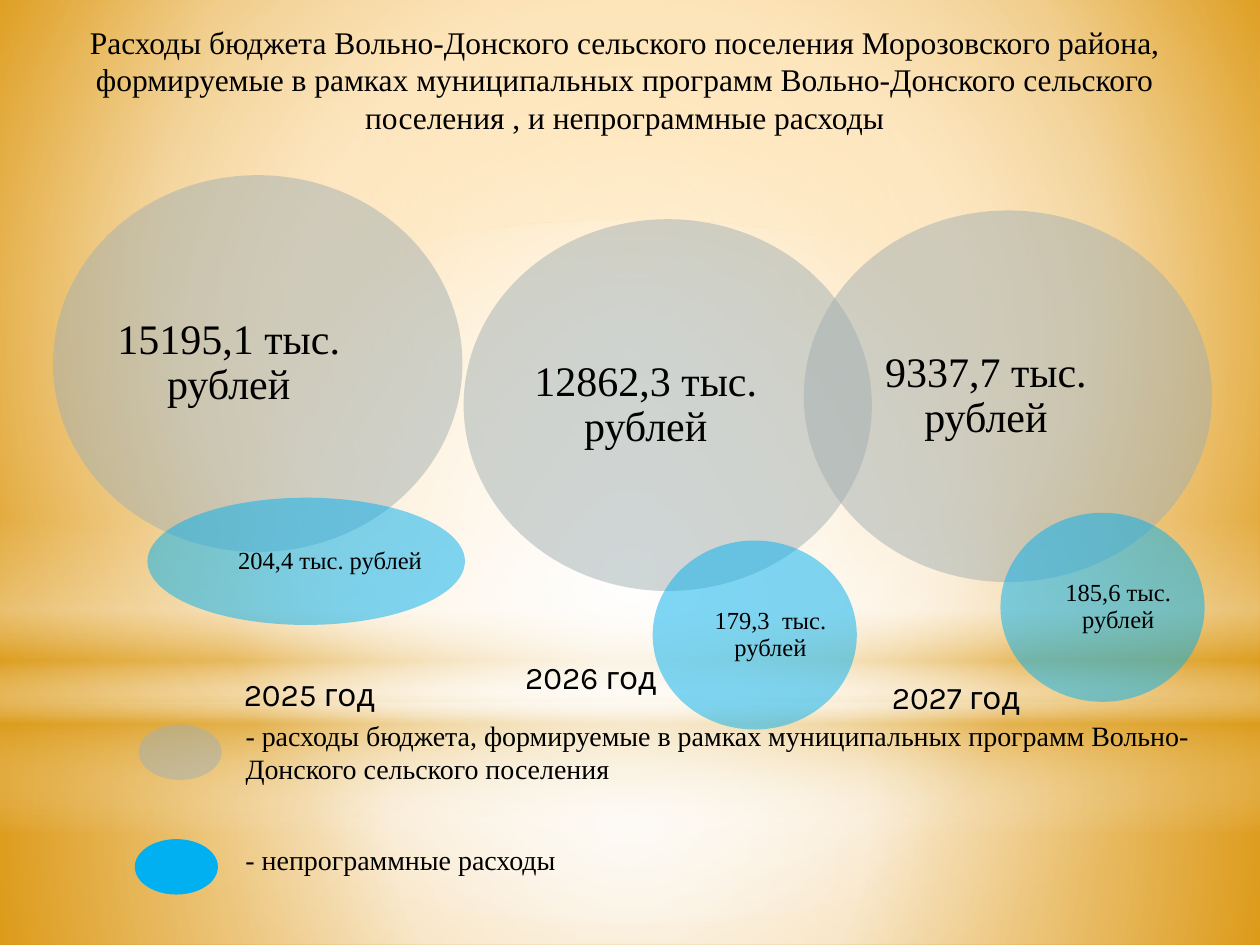
from dataclasses import dataclass

from pptx import Presentation
from pptx.dml.color import RGBColor
from pptx.enum.shapes import MSO_SHAPE as Shape
from pptx.enum.text import MSO_ANCHOR as Anchor, MSO_AUTO_SIZE as AutoSize, PP_ALIGN as Align
from pptx.oxml import parse_xml
from pptx.oxml.ns import nsdecls, qn
from pptx.util import Inches, Pt


@dataclass(frozen=True)
class Theme:
    serif: str = "Times New Roman"
    sans: str = "Karla"
    ink: str = "000000"
    program: str = "A2AFB1"
    other: str = "00B0F0"
    white: str = "FFFFFF"
    gold: str = "DC9E1F"
    backdrop: tuple = ("FFA607", "F9CD88", "E08E02")
    heading: int = 18
    legend: int = 16
    large: int = 24
    small: int = 14


def set_gradient(fill, holder, stops, focus=None):
    """Stops are (position %, colour, opacity %); without a focus it runs downwards."""
    fill.gradient()
    gradient = holder.find(qn("a:gradFill"))
    for child in list(gradient):
        gradient.remove(child)
    entries = "".join(
        f'<a:gs pos="{position * 1000}"><a:srgbClr val="{color}">'
        f'<a:alpha val="{opacity * 1000}"/></a:srgbClr></a:gs>'
        for position, color, opacity in stops)
    gradient.append(parse_xml(f'<a:gsLst {nsdecls("a")}>{entries}</a:gsLst>'))
    if focus:
        edges = " ".join(f'{side}="{value * 1000}"' for side, value in zip("ltrb", focus))
        direction = (f'<a:path {nsdecls("a")} path="circle">'
                     f'<a:fillToRect {edges}/></a:path>')
    else:
        direction = f'<a:lin {nsdecls("a")} ang="5400000" scaled="0"/>'
    gradient.append(parse_xml(direction))


class SlideBuilder:
    def __init__(self, page, theme):
        self.page = page
        self.theme = theme

    def background(self, stops, focus):
        fill = self.page.background.fill
        fill.solid()
        holder = self.page._element.find(".//" + qn("p:bgPr"))
        set_gradient(fill, holder, stops, focus)

    def shape(self, kind, area):
        shape = self.page.shapes.add_shape(kind, *map(Inches, area))
        shape.shadow.inherit = False
        shape.line.fill.background()
        return shape

    def glow(self, kind, area, stops, focus=None):
        shape = self.shape(kind, area)
        set_gradient(shape.fill, shape._element.spPr, stops, focus)

    def ellipse(self, area, color, opacity=50):
        shape = self.shape(Shape.OVAL, area)
        shape.fill.solid()
        shape.fill.fore_color.rgb = RGBColor.from_string(color)
        if opacity < 100:
            tint = shape._element.spPr.find(".//" + qn("a:srgbClr"))
            tint.append(parse_xml(f'<a:alpha {nsdecls("a")} val="{opacity * 1000}"/>'))
        return shape

    def set_text(self, frame, text, size, font, align):
        frame.word_wrap = True
        frame.text = text
        para = frame.paragraphs[0]
        para.alignment = align
        for span in para.runs:
            span.font.size = Pt(size)
            span.font.name = font
            span.font.color.rgb = RGBColor.from_string(self.theme.ink)
        return para

    def text(self, area, text, size, font=None, align=Align.LEFT):
        box = self.page.shapes.add_textbox(*map(Inches, area))
        box.text_frame.auto_size = AutoSize.SHAPE_TO_FIT_TEXT
        self.set_text(box.text_frame, text, size, font or self.theme.serif, align)

    def amount(self, shape, text, size, left=0, right=0):
        """Centre an amount in a shape, shifted by its side margins."""
        frame = shape.text_frame
        frame.margin_left, frame.margin_right = Inches(left), Inches(right)
        frame.margin_top = frame.margin_bottom = 0
        frame.vertical_anchor = Anchor.MIDDLE
        para = self.set_text(frame, text, size, self.theme.serif, Align.CENTER)
        para.line_spacing = 0.9

    def amount_box(self, area, text, size):
        self.amount(self.page.shapes.add_textbox(*map(Inches, area)), text, size)

    def circle_pair(self, program_at, program_text, other_at, other_text):
        theme = self.theme
        program = self.ellipse((*program_at, 3.24, 2.95), theme.program)
        self.amount(program, program_text, theme.large, right=0.35)
        other = self.ellipse((*other_at, 1.62, 1.5), theme.other)
        self.amount(other, other_text, theme.small, left=0.25)


def draw_backdrop(builder):
    theme = builder.theme
    white, gold = theme.white, theme.gold
    center = (50, 50, 50, 50)
    builder.background([(position, color, 100) for position, color
                        in zip((0, 60, 100), theme.backdrop)], (20, 10, 20, 60))
    builder.glow(Shape.RECTANGLE, (0, 5.58, 10, 1.92),
                 [(0, white, 91), (37, white, 76), (100, gold, 79)], center)
    builder.glow(Shape.RECTANGLE, (0, 0, 10, 5.58),
                 [(0, white, 89), (48, white, 62), (100, gold, 79)], center)
    builder.glow(Shape.RECTANGLE, (0, 4.12, 10, 2.5),
                 [(0, white, 0), (29, white, 30), (45, gold, 40),
                  (55, white, 26), (65, gold, 60), (100, white, 0)])
    builder.glow(Shape.OVAL, (0, 1.75, 10, 5.58),
                 [(0, white, 100), (56, white, 0)], center)


def main():
    deck = Presentation()
    deck.slide_width, deck.slide_height = Inches(10), Inches(7.5)
    theme = Theme()
    builder = SlideBuilder(deck.slides.add_slide(deck.slide_layouts[6]), theme)
    draw_backdrop(builder)

    builder.text((0.43, 0.13, 9.06, 1.01),
                 "Расходы бюджета Вольно-Донского сельского поселения Морозовского района, "
                 "формируемые в рамках муниципальных программ Вольно-Донского сельского "
                 "поселения , и непрограммные расходы", theme.heading, align=Align.CENTER)

    builder.circle_pair((3.68, 1.74), "12862,3 тыс. рублей",
                        (5.18, 4.29), "179,3  тыс. рублей")

    builder.ellipse((0.42, 1.39, 3.25, 2.99), theme.program)
    builder.amount_box((0.88, 1.74, 1.87, 2.29), "15195,1 тыс. рублей", theme.large)
    builder.ellipse((1.17, 3.95, 2.52, 1.01), theme.other)
    builder.amount_box((1.89, 4.07, 1.46, 0.77), "204,4 тыс. рублей", theme.small)

    builder.ellipse((1.1, 5.75, 0.66, 0.44), theme.program)
    builder.text((1.85, 5.65, 7.72, 0.64),
                 "- расходы бюджета, формируемые в рамках муниципальных программ "
                 "Вольно-Донского сельского поселения", theme.legend)
    builder.ellipse((1.07, 6.66, 0.66, 0.44), theme.other, opacity=100)
    builder.text((1.85, 6.64, 6.77, 0.37), "- непрограммные расходы", theme.legend)

    years = [("2025 год", (1.17, 5.31, 2.57, 0.4), Align.CENTER),
             ("2026 год", (4.07, 5.17, 3.27, 0.4), Align.LEFT),
             ("2027 год", (6.98, 5.33, 3.27, 0.4), Align.LEFT)]
    for year, area, align in years:
        builder.text(area, year, theme.heading, theme.sans, align)

    builder.circle_pair((6.38, 1.67), "9337,7 тыс. рублей",
                        (7.94, 4.07), "185,6 тыс. рублей")

    deck.save("out.pptx")


if __name__ == "__main__":
    main()
